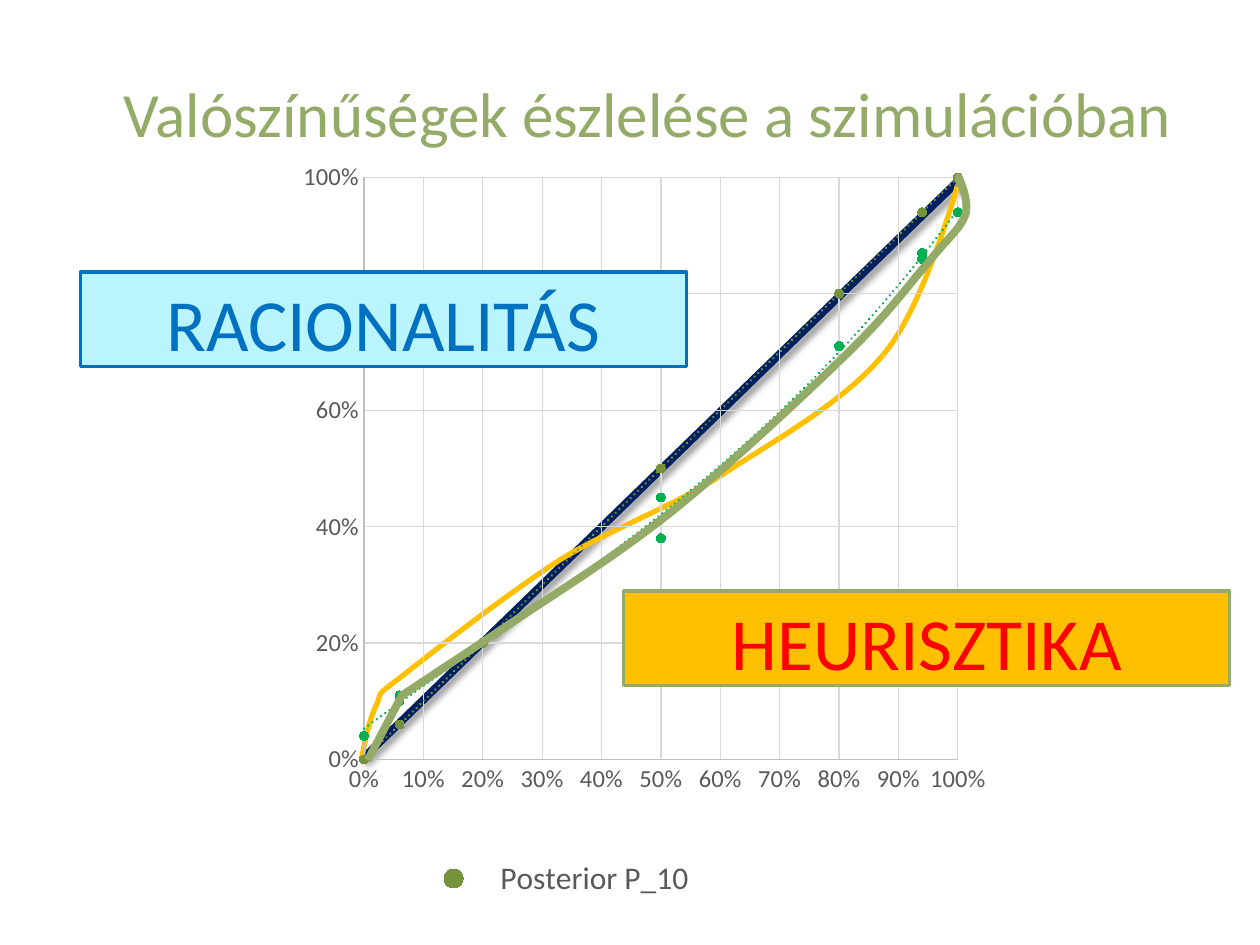
"""Build a slide that sets perceived probabilities against rational ones."""
from lxml.etree import SubElement
from pptx import Presentation
from pptx.chart.data import XyChartData
from pptx.dml.color import RGBColor
from pptx.enum.chart import XL_CHART_TYPE as CT, XL_LEGEND_POSITION as LP
from pptx.enum.chart import XL_MARKER_STYLE as MS, XL_TICK_MARK as TM
from pptx.enum.shapes import MSO_CONNECTOR, MSO_SHAPE
from pptx.enum.text import MSO_ANCHOR, PP_ALIGN
from pptx.oxml import parse_xml
from pptx.oxml.ns import nsdecls, qn
from pptx.util import Pt

TITLE = {"text": "Valószínűségek észlelése a szimulációban", "box": (46, 39, 648, 90),
         "size": 36, "color": "94AA67"}
LABEL_SIZE = (346.3, 54)
HEURISTIC_LABEL = {"text": "HEURISZTIKA", "corner": (356.4, 337.7),
                   "color": "FF0000", "fill": "FFC000", "border": "94AA67"}
RATIONAL_LABEL = {"text": "RACIONALITÁS", "corner": (46, 155.5),
                  "color": "0070C0", "fill": "BAF4FC", "border": "0070C0"}

CHART_BOX = (133.2, 85, 450.7, 455)
PLOT_LAYOUT = {"x": 0.166, "y": 0.036, "w": 0.753, "h": 0.731}
LEGEND_LAYOUT = {"x": 0.22, "y": 0.89, "w": 0.5, "h": 0.06}
HIDDEN_ENTRIES = (2, 3)
X_STEP, Y_STEP = 0.1, 0.2
TRUE_P = [0.06, 0, 0.06, 0.5, 0.2, 0.8, 0.5, 1, 0.94, 0.94]
ESTIMATED_P = [0.1, 0.04, 0.11, 0.38, 0.2, 0.71, 0.45, 0.94, 0.87, 0.86]
LINEAR = '<c:trendlineType val="linear"/>'
CUBIC = '<c:trendlineType val="poly"/><c:order val="3"/>'
SERIES = [("Posterior P_10", TRUE_P, "76923C", LINEAR),
          ("Becsült P_10 ", ESTIMATED_P, "00B050", CUBIC)]

DIAGONAL = (206.6, 434.2, 547.2, 103.7)
HEURISTIC_CURVE = [
    [(206.6, 434.2)],
    [(208.8, 422.6), (211, 411.1), (215.3, 402.5)],
    [(218.9, 394.6), (212.4, 399.6), (230.4, 385.9)],
    [(247.7, 372.2), (290.2, 339.1), (320.4, 319.7)],
    [(351.4, 301), (383.8, 290.2), (414.7, 270)],
    [(445.7, 249.8), (484.6, 228.2), (506.2, 200.9)],
    [(528.5, 173.5), (547.2, 105.8), (547.2, 105.8)],
]
ESTIMATE_CURVE = [
    [(210.2, 434.2)],
    [(229.7, 397.4)],
    [(280.8, 363.6)],
    [(306, 346.3), (346.3, 321.8), (380.2, 295.2)],
    [(414, 268.6), (458.6, 226.8), (483.8, 202.3)],
    [(509, 177.8), (519.1, 162.7), (530.6, 149.8)],
    [(541.4, 136.1), (548.6, 131), (551.5, 123.1)],
    [(554.4, 115.2), (547.9, 101.5), (547.9, 101.5)],
    [(548.6, 106.6)],
]


def rgb(value):
    return RGBColor.from_string(value)


def pts(values):
    return [Pt(v) for v in values]


def set_attrs(obj, values):
    for key, value in values.items():
        setattr(obj, key, value)


def set_fill(fill, color):
    fill.solid()
    fill.fore_color.rgb = rgb(color)


def set_line(line, color, width):
    line.color.rgb = rgb(color)
    line.width = Pt(width)


def set_font(font, size, color):
    set_attrs(font, {"name": "Calibri", "size": Pt(size), "bold": False})
    font.color.rgb = rgb(color)


def write(sp, text, size, color):
    tf = sp.text_frame
    set_attrs(tf, {"word_wrap": True, "vertical_anchor": MSO_ANCHOR.TOP})
    p = tf.paragraphs[0]
    p.alignment = PP_ALIGN.CENTER
    r = p.add_run()
    r.text = text
    set_font(r.font, size, color)


def add_title(shapes, text, box, size, color):
    sp = shapes.title
    set_attrs(sp, dict(zip(("left", "top", "width", "height"), pts(box))))
    write(sp, text, size, color)
    shapes._spTree.append(sp._element)


def add_label(shapes, text, corner, color, fill, border):
    sp = shapes.add_shape(MSO_SHAPE.RECTANGLE, *pts(corner + LABEL_SIZE))
    sp.shadow.inherit = False
    set_fill(sp.fill, fill)
    set_line(sp.line, border, 2)
    write(sp, text, 42, color)


def add_diagonal(shapes):
    cx = shapes.add_connector(MSO_CONNECTOR.STRAIGHT, *pts(DIAGONAL))
    set_line(cx.line, "002060", 4.5)
    cx._element.spPr.append(parse_xml(
        f'<a:effectLst {nsdecls("a")}><a:outerShdw blurRad="{Pt(4)}" dist="{Pt(3)}" dir="2700000">'
        '<a:srgbClr val="000000"><a:alpha val="40000"/></a:srgbClr></a:outerShdw></a:effectLst>'))


def add_curve(shapes, segments, color, width):
    points = [pts(point) for segment in segments for point in segment]
    builder = shapes.build_freeform(*points[0])
    builder.add_line_segments(points[1:], close=False)
    sp = builder.convert_to_shape()
    sp.shadow.inherit = False
    sp.fill.background()
    set_line(sp.line, color, width)
    outline = next(sp._element.iter(qn("a:path")))
    steps = iter(outline.findall(qn("a:lnTo")))
    for segment in segments[1:]:
        group = [next(steps) for _ in segment]
        if len(group) == 3:
            bezier = SubElement(outline, qn("a:cubicBezTo"))
            group[0].addprevious(bezier)
            for step in group:
                bezier.append(step[0])
                outline.remove(step)


def manual_layout(sizes, target=""):
    values = "".join(f'<c:{key} val="{value}"/>' for key, value in sizes.items())
    return parse_xml(f'<c:layout {nsdecls("c")}><c:manualLayout>{target}<c:xMode val="edge"/>'
                     f'<c:yMode val="edge"/>{values}</c:manualLayout></c:layout>')


def format_axis(axis, step):
    set_attrs(axis, {"minimum_scale": 0, "maximum_scale": 1, "major_unit": step,
                     "major_tick_mark": TM.NONE, "minor_tick_mark": TM.NONE,
                     "has_major_gridlines": True})
    set_attrs(axis.tick_labels, {"number_format": "0%", "number_format_is_linked": False})
    set_font(axis.tick_labels.font, 14, "595959")
    set_line(axis.format.line, "BFBFBF", 0.75)
    set_line(axis.major_gridlines.format.line, "D9D9D9", 0.75)


def format_series(series, color, trend):
    series.format.line.fill.background()
    set_attrs(series.marker, {"style": MS.CIRCLE, "size": 5})
    set_fill(series.marker.format.fill, color)
    set_line(series.marker.format.line, color, 0.75)
    series._element.find(qn("c:xVal")).addprevious(parse_xml(
        f'<c:trendline {nsdecls("c", "a")}><c:spPr><a:ln w="{Pt(1.5)}" cap="rnd"><a:solidFill>'
        f'<a:srgbClr val="{color}"/></a:solidFill><a:prstDash val="sysDot"/></a:ln></c:spPr>'
        f'{trend}<c:dispRSqr val="0"/><c:dispEq val="0"/></c:trendline>'))


def format_legend(chart):
    chart.has_legend = True
    legend = chart.legend
    set_attrs(legend, {"position": LP.BOTTOM, "include_in_layout": False})
    set_font(legend.font, 18, "595959")
    for old in legend._element.findall(qn("c:layout")):
        legend._element.remove(old)
    position = legend._element.find(qn("c:legendPos"))
    position.addnext(manual_layout(LEGEND_LAYOUT))
    for index in reversed(HIDDEN_ENTRIES):
        position.addnext(parse_xml(f'<c:legendEntry {nsdecls("c")}><c:idx val="{index}"/>'
                                   '<c:delete val="1"/></c:legendEntry>'))


def add_chart(shapes):
    data = XyChartData()
    for name, values, *_ in SERIES:
        series = data.add_series(name)
        for x, y in zip(TRUE_P, values):
            series.add_data_point(x, y)
    chart = shapes.add_chart(CT.XY_SCATTER, *pts(CHART_BOX), data).chart
    chart.has_title = False
    set_attrs(chart.font, {"size": Pt(16), "name": "Noto Sans"})
    format_axis(chart.category_axis, X_STEP)
    format_axis(chart.value_axis, Y_STEP)
    for series, (*_, color, trend) in zip(chart.plots[0].series, SERIES):
        format_series(series, color, trend)
    format_legend(chart)
    area = chart._chartSpace.chart.plotArea
    for old in area.findall(qn("c:layout")):
        area.remove(old)
    area.insert(0, manual_layout(PLOT_LAYOUT, '<c:layoutTarget val="inner"/>'))


def main():
    prs = Presentation()
    prs.slide_width, prs.slide_height = pts((720, 540))
    shapes = prs.slides.add_slide(prs.slide_layouts[5]).shapes
    add_diagonal(shapes)
    add_curve(shapes, HEURISTIC_CURVE, "FFC000", 3)
    add_chart(shapes)
    add_title(shapes, **TITLE)
    add_label(shapes, **HEURISTIC_LABEL)
    add_curve(shapes, ESTIMATE_CURVE, "94AA67", 4.5)
    add_label(shapes, **RATIONAL_LABEL)
    prs.save("out.pptx")


if __name__ == "__main__":
    main()
